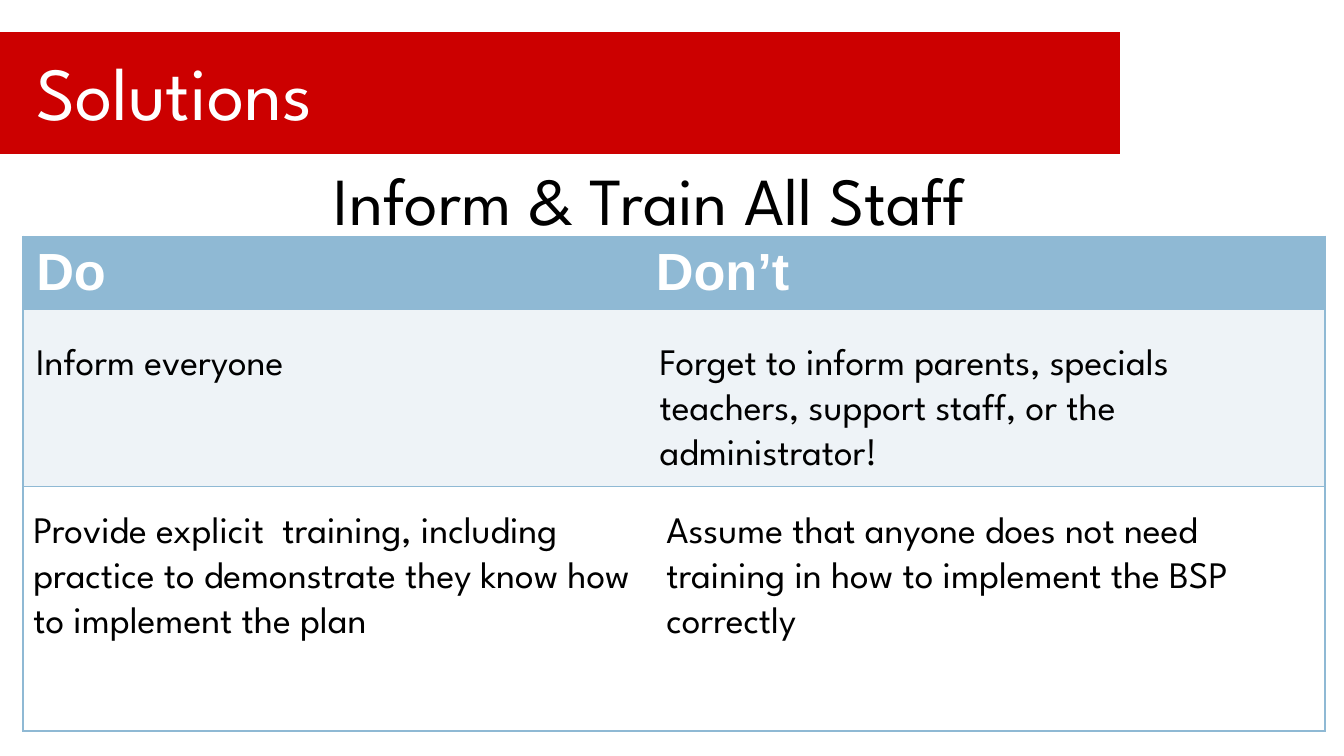
from dataclasses import dataclass

from lxml import etree
from pptx import Presentation
from pptx.dml.color import RGBColor
from pptx.enum.shapes import MSO_SHAPE
from pptx.enum.text import MSO_ANCHOR, MSO_AUTO_SIZE, PP_ALIGN
from pptx.oxml.ns import qn
from pptx.util import Inches, Pt

RECTANGLE = MSO_SHAPE.RECTANGLE
TOP, MIDDLE = MSO_ANCHOR.TOP, MSO_ANCHOR.MIDDLE
NO_AUTOFIT = MSO_AUTO_SIZE.NONE
LEFT, CENTER = PP_ALIGN.LEFT, PP_ALIGN.CENTER


@dataclass(frozen=True)
class Theme:
    red: str = "CC0000"
    blue: str = "8FB9D4"
    pale: str = "EEF3F7"
    white: str = "FFFFFF"
    black: str = "000000"
    text_font: str = "League Spartan"
    header_font: str = "Arial"
    title_size: int = 40
    subtitle_size: int = 36
    header_size: int = 28
    text_size: int = 20
    line_width: float = 1
    bar_line_width: float = 0.75


class SlideBuilder:
    def __init__(self, page, theme):
        self.page = page
        self.theme = theme

    def style(self, para, size, color, font=None, bold=False, align=LEFT):
        para.alignment = align
        para.font.name = font or self.theme.text_font
        para.font.size = Pt(size)
        para.font.bold = bold
        para.font.color.rgb = RGBColor.from_string(color)

    def bar(self, left, top, width, height):
        """Add the title band behind everything else."""
        bar = self.page.shapes.add_shape(
            RECTANGLE, Inches(left), Inches(top), Inches(width), Inches(height))
        bar.shadow.inherit = False
        bar.fill.solid()
        bar.fill.fore_color.rgb = RGBColor.from_string(self.theme.red)
        bar.line.color.rgb = RGBColor.from_string(self.theme.white)
        bar.line.width = Pt(self.theme.bar_line_width)
        self.page.shapes._spTree.insert(2, bar._element)

    def placeholder(self, index, text, place, size, color, anchor=TOP, align=LEFT):
        box = self.page.placeholders[index]
        box.left, box.top, box.width, box.height = map(Inches, place)
        frame = box.text_frame
        frame.text = text
        frame.auto_size = NO_AUTOFIT
        frame.vertical_anchor = anchor
        frame.margin_left = frame.margin_right = Inches(0.1)
        frame.margin_top = frame.margin_bottom = Inches(0.1)
        para = frame.paragraphs[0]
        para.space_before = Pt(0)
        self.style(para, size, color, align=align)
        properties = para._p.get_or_add_pPr()
        properties.set("marL", str(Inches(0.17)) if index else "0")
        properties.set("indent", "0")
        # The bullet setting has to precede the default run properties.
        bullet = etree.Element(qn("a:buNone"))
        properties.find(qn("a:defRPr")).addprevious(bullet)

    def text(self, words, left, top, width, height):
        box = self.page.shapes.add_textbox(
            Inches(left), Inches(top), Inches(width), Inches(height))
        frame = box.text_frame
        frame.word_wrap = True
        frame.margin_left = frame.margin_right = Inches(0.1)
        frame.margin_top = frame.margin_bottom = Inches(0.05)
        frame.text = words
        self.style(frame.paragraphs[0], self.theme.text_size, self.theme.black)

    def borders(self, cell, visible):
        """Draw the visible sides (of L, R, T, B) and clear the others."""
        properties = cell._tc.get_or_add_tcPr()
        for position, side in enumerate("LRTB"):
            line = etree.Element(
                qn(f"a:ln{side}"), w=str(Pt(self.theme.line_width)))
            if side in visible:
                fill = etree.SubElement(line, qn("a:solidFill"))
                etree.SubElement(fill, qn("a:srgbClr"), val=self.theme.blue)
            else:
                etree.SubElement(line, qn("a:noFill"))
            properties.insert(position, line)

    def table(self, headers, left, top, widths, heights):
        """Add a header row above empty banded rows."""
        fills = (self.theme.blue, self.theme.pale, self.theme.white)
        table = self.page.shapes.add_table(
            len(heights), len(widths), Inches(left), Inches(top),
            Inches(sum(widths)), Inches(sum(heights))).table
        for column, width in zip(table.columns, widths):
            column.width = Inches(width)
        for row, height, color in zip(table.rows, heights, fills):
            row.height = Inches(height)
            for cell, outer_side in zip(row.cells, "LR"):
                cell.fill.solid()
                cell.fill.fore_color.rgb = RGBColor.from_string(color)
                self.borders(cell, outer_side + "TB")
        for cell, header in zip(table.rows[0].cells, headers):
            cell.text = header
            self.style(cell.text_frame.paragraphs[0], self.theme.header_size,
                       self.theme.white, self.theme.header_font, bold=True)


def main():
    theme = Theme()
    deck = Presentation()
    deck.slide_width = Inches(10)
    deck.slide_height = deck.slide_width * 9 // 16
    slide = SlideBuilder(deck.slides.add_slide(deck.slide_layouts[1]), theme)

    slide.bar(-0.08, 0.23, 8.42, 0.92)
    slide.placeholder(0, "Solutions", (0.17, 0.27, 9.47, 0.81),
                      theme.title_size, theme.white, anchor=MIDDLE)
    slide.placeholder(1, "Inform & Train All Staff", (0, 1.08, 9.5, 4.23),
                      theme.subtitle_size, theme.black, align=CENTER)
    slide.table(("Do", "Don’t"), 0.17, 1.76, (4.61, 5.08), (0.54, 1.32, 1.82))

    slide.text("Inform everyone", 0.17, 2.47, 4.08, 0.44)
    slide.text("Forget to inform parents, specials teachers, support staff, "
               "or the administrator!", 4.81, 2.47, 4.88, 0.77)
    slide.text("Provide explicit  training, including practice to demonstrate "
               "they know how to implement the plan", 0.15, 3.72, 4.66, 1.45)
    slide.text("Assume that anyone does not need training in how to implement "
               "the BSP correctly", 4.86, 3.72, 4.77, 1.11)

    deck.save("out.pptx")


if __name__ == "__main__":
    main()
